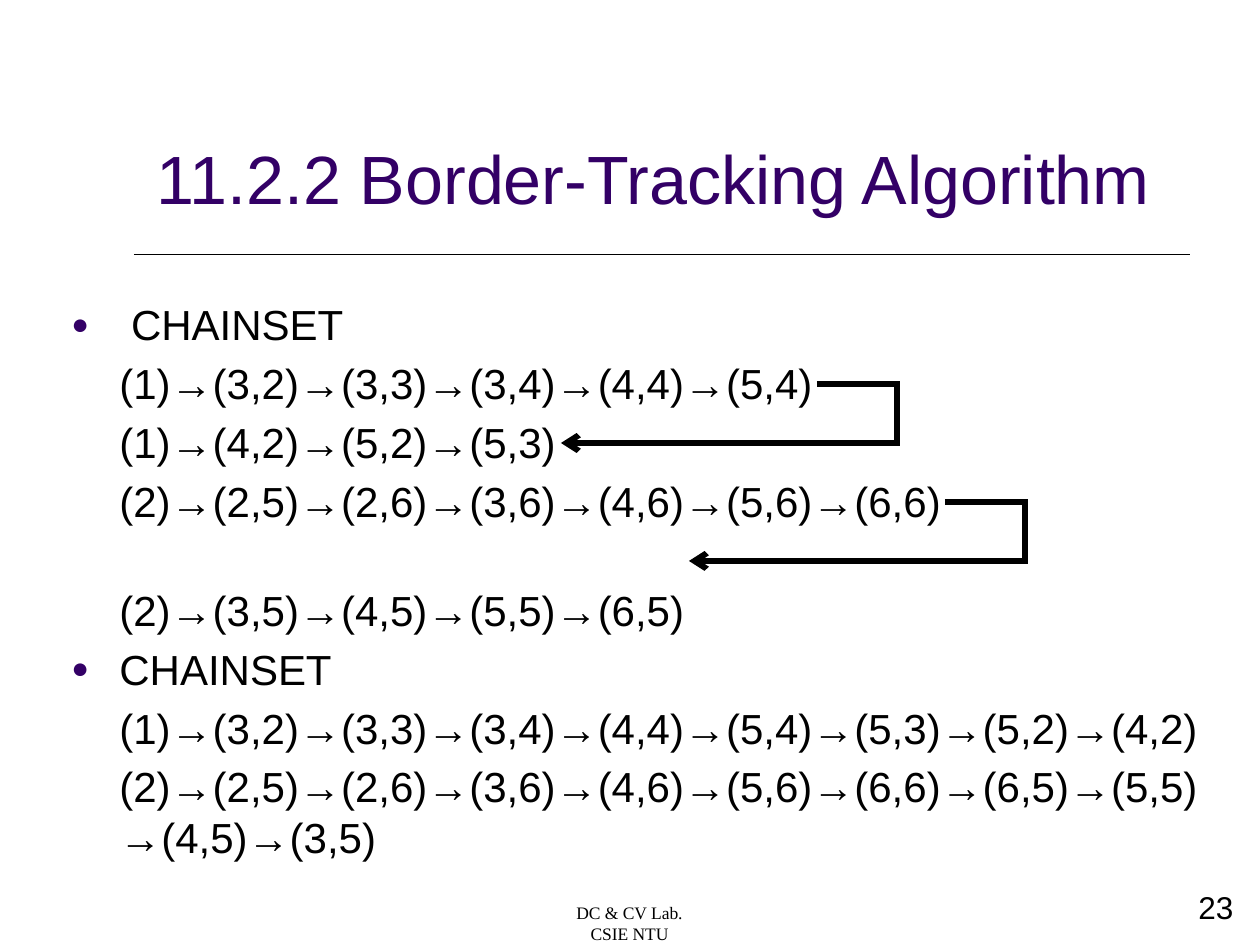
from lxml.etree import SubElement
from pptx import Presentation
from pptx.dml.color import RGBColor
from pptx.enum.shapes import MSO_CONNECTOR as Connector
from pptx.enum.text import MSO_ANCHOR as Anchor, PP_ALIGN as Align
from pptx.oxml.ns import qn
from pptx.util import Emu, Pt

BLACK = RGBColor(0, 0, 0)
PURPLE = RGBColor(0x33, 0x00, 0x66)
SCALE = 914400 // 126
INDENT = 48
PARA_GAP = 4.8
WIDE_GAP = 33.6

TITLE = "11.2.2 Border-Tracking Algorithm"
BODY = [
    (" CHAINSET", True, 0),
    ("(1)→(3,2)→(3,3)→(3,4)→(4,4)→(5,4)", False, PARA_GAP),
    ("(1)→(4,2)→(5,2)→(5,3)", False, PARA_GAP),
    ("(2)→(2,5)→(2,6)→(3,6)→(4,6)→(5,6)→(6,6)", False, PARA_GAP),
    ("(2)→(3,5)→(4,5)→(5,5)→(6,5)", False, WIDE_GAP),
    ("CHAINSET", True, PARA_GAP),
    ("(1)→(3,2)→(3,3)→(3,4)→(4,4)→(5,4)→(5,3)→(5,2)→(4,2)", False, PARA_GAP),
    ("(2)→(2,5)→(2,6)→(3,6)→(4,6)→(5,6)→(6,6)→(6,5)→(5,5) →(4,5)→(3,5)",
     False, PARA_GAP),
]
FOOTER = ["DC & CV Lab.", "CSIE NTU"]
PAGE_NUMBER = "23"
MERGE_STARTS = [(817, 384), (945, 502)]
MERGE_WIDTH, MERGE_HEIGHT, MERGE_BULGE = 256, 59, 80


def px(value):
    return Emu(value * SCALE)


def add_bullet(para):
    props = para._p.get_or_add_pPr()
    props.set("indent", str(-px(INDENT)))
    color = SubElement(props, qn("a:buClr"))
    SubElement(color, qn("a:srgbClr"), val=str(PURPLE))
    SubElement(props, qn("a:buSzPct"), val="70000")
    SubElement(props, qn("a:buFont"), typeface="Arial")
    SubElement(props, qn("a:buChar"), char="●")


def add_text(page, lines, place, size, font="Arial", color=BLACK,
             align=Align.LEFT, anchor=Anchor.TOP, indent=0, top_inset=6):
    box = page.shapes.add_textbox(*map(px, place))
    frame = box.text_frame
    frame.word_wrap = True
    frame.vertical_anchor = anchor
    frame.margin_top = px(top_inset)
    for index, (text, bulleted, gap) in enumerate(lines):
        para = frame.paragraphs[0] if index == 0 else frame.add_paragraph()
        para.alignment = align
        if indent:
            para._p.get_or_add_pPr().set("marL", str(px(indent)))
        if gap:
            para.space_before = Pt(gap)
        if bulleted:
            add_bullet(para)
        span = para.add_run()
        span.text = text
        span.font.name = font
        span.font.size = Pt(size)
        span.font.color.rgb = color


def add_line(page, kind, start, end, width):
    line = page.shapes.add_connector(kind, *map(px, start + end))
    line.line.color.rgb = BLACK
    line.line.width = Pt(width)
    SubElement(line._element.spPr, qn("a:effectLst"))
    return line


def add_merge_arrow(page, start):
    end = (start[0] - MERGE_WIDTH, start[1] + MERGE_HEIGHT)
    arrow = add_line(page, Connector.ELBOW, start, end, 3.25)
    outline = arrow.line._get_or_add_ln()
    SubElement(outline, qn("a:miter"), lim="800000")
    SubElement(outline, qn("a:tailEnd"), type="arrow")
    guides = arrow._element.spPr.find(qn("a:prstGeom")).find(qn("a:avLst"))
    bulge = round(-100000 * MERGE_BULGE / MERGE_WIDTH)
    SubElement(guides, qn("a:gd"), name="adj1", fmla=f"val {bulge}")


def plain(*texts):
    return [(text, False, 0) for text in texts]


def main():
    deck = Presentation()
    deck.slide_width, deck.slide_height = px(1260), px(945)
    page = deck.slides.add_slide(deck.slide_layouts[6])
    add_line(page, Connector.STRAIGHT, (134, 254), (1190, 254), 0.5)
    add_text(page, plain(TITLE), (144, 45, 1116, 179), 39,
             color=PURPLE, anchor=Anchor.BOTTOM)
    add_text(page, BODY, (59, 287, 1169, 607), 24, indent=INDENT, top_inset=12)
    add_text(page, plain(*FOOTER), (430, 896, 399, 63), 10,
             font="Times New Roman", align=Align.CENTER)
    for start in MERGE_STARTS:
        add_merge_arrow(page, start)
    add_text(page, plain(PAGE_NUMBER), (1186, 882, 64, 50), 18)
    deck.save("out.pptx")


if __name__ == "__main__":
    main()
